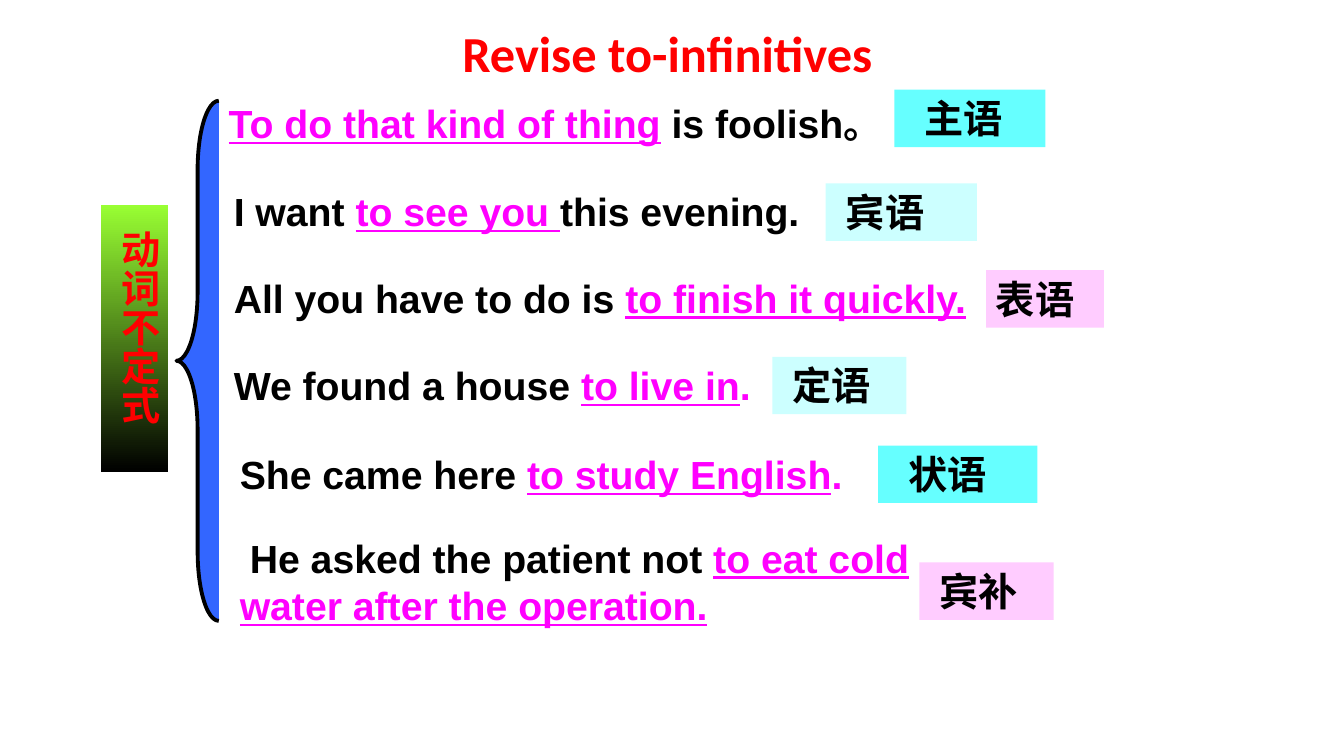
"""Build a slide that reviews the sentence roles of to-infinitives."""
import pptx
import pptx.dml.color
import pptx.enum.shapes
import pptx.enum.text
import pptx.util

Inches, Pt = pptx.util.Inches, pptx.util.Pt
RGBColor = pptx.dml.color.RGBColor
MSO_SHAPE = pptx.enum.shapes.MSO_SHAPE
FIT = pptx.enum.text.MSO_AUTO_SIZE.SHAPE_TO_FIT_TEXT

BLACK = RGBColor(0x00, 0x00, 0x00)
RED = RGBColor(0xFF, 0x00, 0x00)
MAGENTA = RGBColor(0xFF, 0x00, 0xFF)
LIME = RGBColor(0x99, 0xFF, 0x33)
BLUE = RGBColor(0x33, 0x66, 0xFF)
CYAN = RGBColor(0x66, 0xFF, 0xFF)
PALE_CYAN = RGBColor(0xCC, 0xFF, 0xFF)
PINK = RGBColor(0xFF, 0xCC, 0xFF)

PLAIN = {"size": Pt(28), "name": "Arial", "bold": True, "underline": False, "color": BLACK}
DOT = {**PLAIN, "color": MAGENTA}
INFINITIVE = {**DOT, "underline": True}
ROLE = {**PLAIN, "name": "Times New Roman"}
TOPIC = {**ROLE, "color": RED}
TITLE = {**PLAIN, "size": Pt(36), "name": "Calibri", "color": RED}

LINE_HEIGHT = 0.57
MARGIN = 0.1
SPACE = 0.1

sentences = [
    ((2.17, 0.94, 7.25, LINE_HEIGHT),
     [("To do that kind of thing", INFINITIVE), (" is foolish。", PLAIN)]),
    ((2.22, 1.81, 6.11, LINE_HEIGHT),
     [("I want ", PLAIN), ("to see you ", INFINITIVE), ("this evening.", PLAIN)]),
    ((2.22, 2.67, 7.92, LINE_HEIGHT),
     [("All you have to do is ", PLAIN), ("to finish it quickly.", INFINITIVE)]),
    ((2.22, 3.54, 6.58, LINE_HEIGHT),
     [("We found a house ", PLAIN), ("to live in", INFINITIVE), (".", DOT)]),
    ((2.28, 4.42, 6.3, LINE_HEIGHT),
     [("She came here ", PLAIN), ("to study English", INFINITIVE), (".", DOT)]),
    ((2.28, 5.25, 7.33, 1.04),
     [("He asked the patient not ", PLAIN),
      ("to eat cold water after the operation.", INFINITIVE)]),
]

roles = [
    ("主语", 8.87, 0.89, 1.5, CYAN, 2),
    ("宾语", 8.19, 1.82, 1.5, PALE_CYAN, 1),
    ("表语", 9.78, 2.68, 1.17, PINK, 0),
    ("定语", 7.66, 3.54, 1.33, PALE_CYAN, 1),
    ("状语", 8.71, 4.42, 1.58, CYAN, 2),
    ("宾补", 9.12, 5.58, 1.33, PINK, 1),
]


def write(shape, runs, **frame_format):
    """Fill a shape's first paragraph with formatted runs and return it."""
    frame = shape.text_frame
    defaults = {"word_wrap": True, "auto_size": FIT,
                "vertical_anchor": pptx.enum.text.MSO_ANCHOR.TOP}
    for key, value in {**defaults, **frame_format}.items():
        setattr(frame, key, value)
    paragraph = frame.paragraphs[0]
    paragraph.alignment = pptx.enum.text.PP_ALIGN.LEFT
    for text, style in runs:
        run = paragraph.add_run()
        run.text = text
        for key, value in style.items():
            if key == "color":
                run.font.color.rgb = value
            else:
                setattr(run.font, key, value)
    return paragraph


def add_preset(slide, preset, box):
    """Add a shape without shadow or outline."""
    shape = slide.shapes.add_shape(preset, *map(Inches, box))
    shape.shadow.inherit = False
    shape.line.fill.background()
    return shape


def main():
    """Draw the topic, brace, sentences, roles and title."""
    deck = pptx.Presentation()
    deck.slide_width, deck.slide_height = Inches(13.33), Inches(7.5)
    slide = deck.slides.add_slide(deck.slide_layouts[6])

    topic = add_preset(slide, MSO_SHAPE.RECTANGLE, (1, 2.03, 0.67, 2.65))
    topic.fill.gradient()
    topic.fill.gradient_angle = 270
    for stop, position, color in zip(topic.fill.gradient_stops, (0, 1), (LIME, BLACK)):
        stop.position = position
        stop.color.rgb = color
    write(topic, [("动词不定式", TOPIC)], margin_top=Inches(0.05 + 2 * SPACE))
    topic.text_frame._txBody.bodyPr.set("vert", "eaVert")

    brace = add_preset(slide, MSO_SHAPE.LEFT_BRACE, (1.75, 1, 0.42, 5.16))
    brace.adjustments[0], brace.adjustments[1] = 1.625, 0.5
    brace.fill.solid()
    brace.fill.fore_color.rgb = BLUE
    brace.line.color.rgb = BLACK
    brace.line.width = Pt(2.75)

    for box, runs in sentences:
        sentence = slide.shapes.add_textbox(*map(Inches, box))
        paragraph = write(sentence, runs)
    paragraph._p.get_or_add_pPr().set("indent", str(Inches(SPACE)))

    for text, left, top, width, color, spaces in roles:
        role = add_preset(slide, MSO_SHAPE.RECTANGLE, (left, top, width, LINE_HEIGHT))
        role.fill.solid()
        role.fill.fore_color.rgb = color
        write(role, [(text, ROLE)], margin_left=Inches(MARGIN + spaces * SPACE))

    title = slide.shapes.add_textbox(*map(Inches, (3.49, 0.17, 6.26, 0.58)))
    heading = write(title, [("Revise to-infinitives", TITLE)], word_wrap=False,
                    auto_size=pptx.enum.text.MSO_AUTO_SIZE.NONE)
    heading.alignment = pptx.enum.text.PP_ALIGN.CENTER

    deck.save("out.pptx")


if __name__ == "__main__":
    main()
